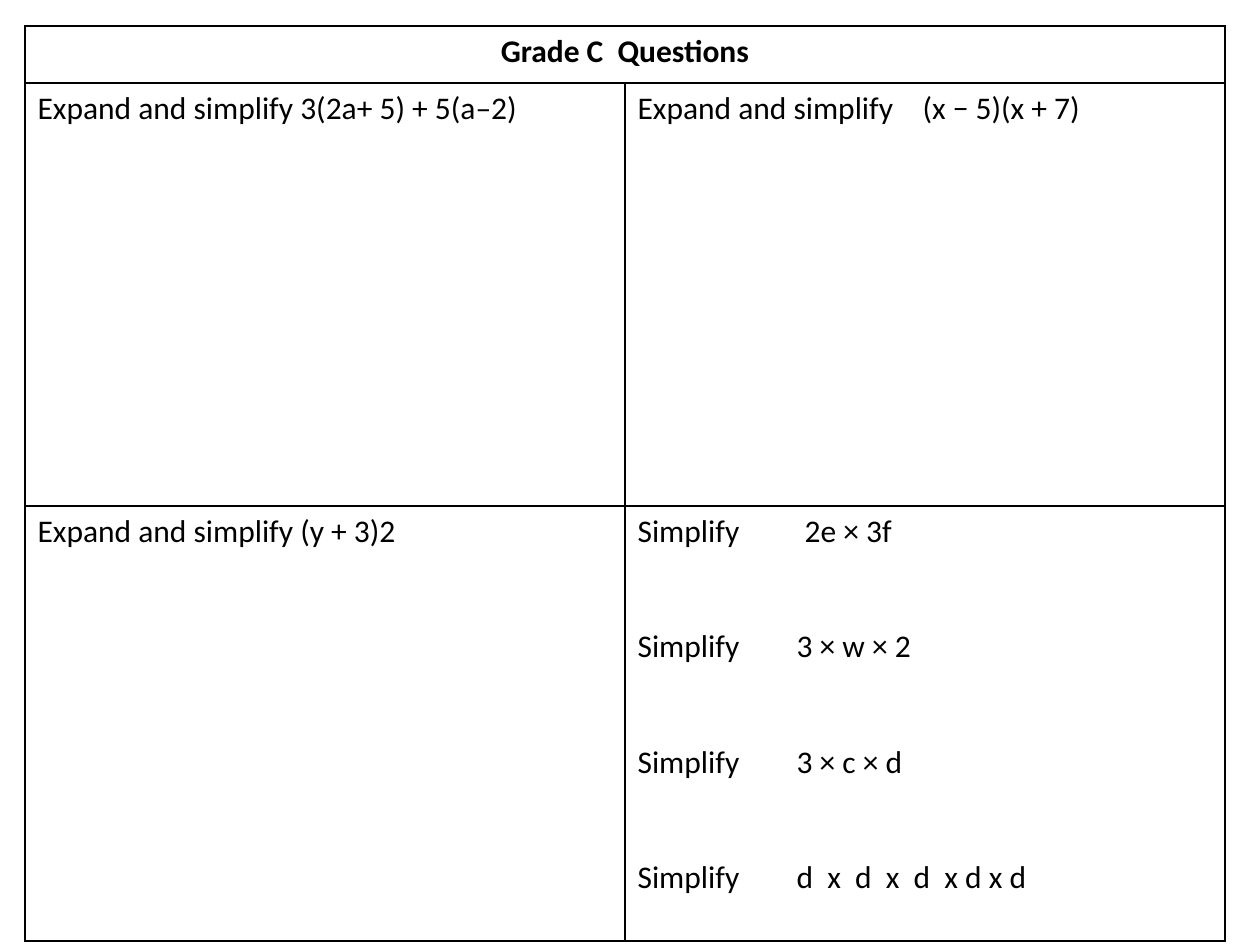
"""Build a one-slide worksheet of grade C algebra questions in a bordered table."""
import lxml.etree
import pptx
import pptx.dml.color
import pptx.enum.text
import pptx.oxml.ns
import pptx.util

SCALE = 914400 // 126
SLIDE_SIZE = (1260, 945)
TABLE_LEFT, TABLE_TOP = 25, 26
COLUMN_WIDTHS = (600, 600)
ROW_HEIGHTS = (57, 423, 435)
ANSWER_GAP = 44
BLACK = "000000"
FONT = {"name": "Calibri", "size": pptx.util.Pt(18)}

TITLE = "Grade C  Questions"
QUESTIONS = {
    (1, 0): [("Expand and simplify 3(2a+ 5) + 5(a–2)", None)],
    (1, 1): [("Expand and simplify\t(x − 5)(x + 7)", 285)],
    (2, 0): [("Expand and simplify (y + 3)2", None)],
    (2, 1): [
        ("Simplify\t2e × 3f", 167),
        ("Simplify\t3 × w × 2", 159),
        ("Simplify\t3 × c × d", 159),
        ("Simplify\td  x  d  x  d  x d x d", 159),
    ],
}


def px(length):
    return pptx.util.Emu(length * SCALE)


def color(value):
    return pptx.dml.color.RGBColor.from_string(value)


def add_child(parent, tag, **attributes):
    child = lxml.etree.SubElement(parent, pptx.oxml.ns.qn(tag))
    for name, value in attributes.items():
        child.set(name, str(value))
    return child


def format_cell(cell):
    properties = cell._tc.get_or_add_tcPr()
    for side in ("a:lnL", "a:lnR", "a:lnT", "a:lnB"):
        border = add_child(properties, side, w=pptx.util.Pt(1))
        add_child(add_child(border, "a:solidFill"), "a:srgbClr", val=BLACK)
    cell.fill.background()


def write(paragraph, text, bold=False):
    run = paragraph.add_run()
    run.text = text
    for name, value in {**FONT, "bold": bold}.items():
        setattr(run.font, name, value)
    run.font.color.rgb = color(BLACK)


def write_questions(cell, questions):
    frame = cell.text_frame
    for index, (text, tab) in enumerate(questions):
        paragraph = frame.add_paragraph() if index else frame.paragraphs[0]
        if index:
            paragraph.space_before = pptx.util.Pt(ANSWER_GAP)
        if tab:
            tabs = add_child(paragraph._p.get_or_add_pPr(), "a:tabLst")
            add_child(tabs, "a:tab", pos=px(tab), algn="l")
        write(paragraph, text)


def main():
    presentation = pptx.Presentation()
    presentation.slide_width, presentation.slide_height = map(px, SLIDE_SIZE)
    slide = presentation.slides.add_slide(presentation.slide_layouts[6])
    table = slide.shapes.add_table(
        len(ROW_HEIGHTS), len(COLUMN_WIDTHS), px(TABLE_LEFT), px(TABLE_TOP),
        px(sum(COLUMN_WIDTHS)), px(sum(ROW_HEIGHTS))).table
    table.first_row = table.horz_banding = False
    for column, width in zip(table.columns, COLUMN_WIDTHS):
        column.width = px(width)
    for row, height in zip(table.rows, ROW_HEIGHTS):
        row.height = px(height)
    for cell in table.iter_cells():
        format_cell(cell)

    title_cell = table.cell(0, 0)
    title_cell.merge(table.cell(0, 1))
    heading = title_cell.text_frame.paragraphs[0]
    heading.alignment = pptx.enum.text.PP_ALIGN.CENTER
    write(heading, TITLE, bold=True)
    for position, questions in QUESTIONS.items():
        write_questions(table.cell(*position), questions)
    presentation.save("out.pptx")


if __name__ == "__main__":
    main()
